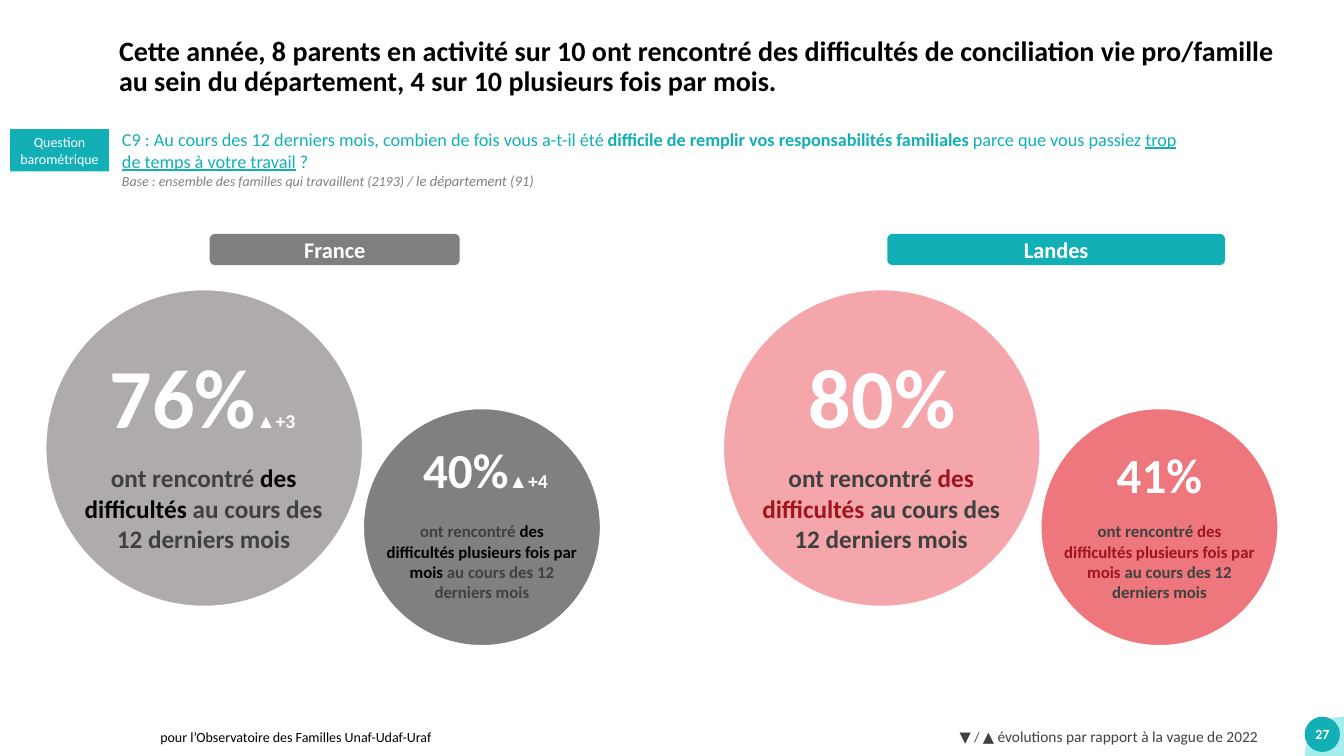
import math

from lxml import etree
from pptx import Presentation
from pptx.dml.color import RGBColor
from pptx.enum.shapes import MSO_SHAPE
from pptx.enum.text import MSO_ANCHOR, PP_ALIGN
from pptx.oxml.ns import qn
from pptx.util import Inches, Pt

OVAL, RECT, ROUNDED = MSO_SHAPE.OVAL, MSO_SHAPE.RECTANGLE, MSO_SHAPE.ROUNDED_RECTANGLE
TOP, MIDDLE = MSO_ANCHOR.TOP, MSO_ANCHOR.MIDDLE
LEFT, CENTER = PP_ALIGN.LEFT, PP_ALIGN.CENTER
COLORS = {
    "teal": "13AFB7", "aqua": "A6EDED", "white": "FFFFFF", "black": "000000",
    "dark": "404040", "grey": "808080", "badge": "7F7F7F", "silver": "AFABAB",
    "rose": "F4A6AA", "coral": "ED777C", "crimson": "9F151C",
}
WIDTH, HEIGHT = 13.33, 7.5
PANEL_LEFT, PANEL_STEP = 0.45, 6.72
BIG, SMALL = 3.15, 2.36
BIG_TOP, SMALL_TOP = 2.87, 4.05

deck = Presentation()
deck.slide_width, deck.slide_height = Inches(WIDTH), Inches(HEIGHT)
slide = deck.slides.add_slide(deck.slide_layouts[6])
shapes = slide.shapes


def write(frame, paragraph, runs, size, color, align=LEFT, anchor=TOP, bold=False, sides=(0.1, 0.1)):
    frame.word_wrap = True
    frame.vertical_anchor = anchor
    frame.margin_left, frame.margin_right = map(Inches, sides)
    paragraph.alignment = align
    font = paragraph.font
    font.name, font.size, font.bold = "Calibri", Pt(size), bold
    font.color.rgb = RGBColor.from_string(COLORS[color])
    for text, changes in runs:
        run = paragraph.add_run()
        run.text = text
        for attribute, value in changes.items():
            if attribute == "color":
                run.font.color.rgb = RGBColor.from_string(COLORS[value])
            else:
                setattr(run.font, attribute, value)


def draw(kind, left, top, width, height, fill, outlined=False):
    shape = shapes.add_shape(kind, *map(Inches, (left, top, width, height)))
    shape.shadow.inherit = False
    shape.fill.solid()
    shape.fill.fore_color.rgb = RGBColor.from_string(COLORS[fill])
    if outlined:
        shape.line.color.rgb = RGBColor.from_string(COLORS["white"])
        shape.line.width = Pt(1.5)
    else:
        shape.line.fill.background()
    return shape


corner_radius = 0.39
arc = [
    (WIDTH - corner_radius * math.cos(math.radians(angle)),
     HEIGHT - corner_radius * math.sin(math.radians(angle)))
    for angle in range(0, 91, 5)
]
builder = shapes.build_freeform(Inches(WIDTH), Inches(HEIGHT))
builder.add_line_segments([(Inches(x), Inches(y)) for x, y in arc])
corner = builder.convert_to_shape()
corner.shadow.inherit = False
corner.fill.solid()
corner.fill.fore_color.rgb = RGBColor.from_string(COLORS["aqua"])
corner.line.fill.background()

page_number = draw(OVAL, 12.94, 7.11, 0.35, 0.35, "teal").text_frame
write(page_number, page_number.paragraphs[0], [("27", {})], 10, "white",
      CENTER, MIDDLE, True, (0, 0))
page_number.word_wrap = False

labels = [
    ((1.59, 7.18, 5.3, 0.26), 10, "black", MIDDLE, False, (0, 0),
     [("pour l’Observatoire des Familles Unaf-Udaf-Uraf", {})]),
    ((1.14, 0.25, 11.81, 0.84), 20, "black", MIDDLE, True, (0.04, 0.1),
     [("Cette année, 8 parents en activité sur 10 ont rencontré des difficultés de "
       "conciliation vie pro/famille au sein du département, 4 sur 10 plusieurs fois "
       "par mois.", {})]),
    ((9.42, 7.16, 3.6, 0.29), 10.5, "dark", TOP, False, (0.1, 0.1),
     [("▼ ", {}), ("/", {"size": Pt(10)}), (" ▲ ", {}),
      ("évolutions par rapport à la vague de 2022", {"size": Pt(11)})]),
    ((1.17, 1.22, 10.77, 0.51), 13, "teal", TOP, False, (0.04, 0.1),
     [("C9 : Au cours des 12 derniers mois, combien de fois vous a-t-il été ", {}),
      ("difficile de remplir vos responsabilités familiales ", {"bold": True}),
      ("parce que vous passiez ", {}),
      ("trop de temps à votre travail", {"underline": True}), (" ?", {})]),
]
for place, size, color, anchor, bold, sides, runs in labels:
    frame = shapes.add_textbox(*map(Inches, place)).text_frame
    write(frame, frame.paragraphs[0], runs, size, color, LEFT, anchor, bold, sides)
    if size == 20:
        frame.paragraphs[0].line_spacing = 0.9

base = frame.add_paragraph()
write(frame, base,
      [("Base : ensemble des familles qui travaillent (2193) ", {}),
       ("/ le département (91)", {"size": Pt(10.5)})],
      10, "grey", sides=(0.04, 0.1))
base.font.italic = True

question_tag = draw(RECT, 0.1, 1.28, 0.98, 0.42, "teal").text_frame
write(question_tag, question_tag.paragraphs[0], [("Question barométrique", {})],
      10, "white", CENTER, MIDDLE, sides=(0.04, 0.04))

panels = [
    ("France", 2.48, "badge", "silver", "grey", "black",
     ("76%", "+3", 0.31, 2.5), ("40%", "+4", 3.31, 2.11), 4.33),
    ("Landes", 3.35, "teal", "rose", "coral", "crimson",
     ("80%", "", 0.21, 2.74), ("41%", "", 3.22, 2.22), 4.38),
]
for column, panel in enumerate(panels):
    area, header_width, header_fill, big_fill, small_fill, accent, often, monthly, monthly_top = panel
    left = PANEL_LEFT + column * PANEL_STEP
    header = draw(ROUNDED, left + 1.63, 2.32, header_width, 0.31, header_fill).text_frame
    write(header, header.paragraphs[0], [(area, {})], 16, "white", CENTER, MIDDLE, True)

    draw(OVAL, left + BIG, SMALL_TOP, SMALL, SMALL, small_fill, True)
    draw(OVAL, left, BIG_TOP, BIG, BIG, big_fill, True)

    bubbles = [
        (often, 3.41, 1.1, 60, (0.27, 4.54, 2.6, 1.31), 18, "des difficultés "),
        (monthly, monthly_top, 0.68, 35, (3.27, 5.12, 2.12, 0.91), 12,
         "des difficultés plusieurs fois par mois "),
    ]
    for figure, top, height, figure_size, caption_place, caption_size, emphasis in bubbles:
        share, change, offset, width = figure
        table = shapes.add_table(
            1, 1, *map(Inches, (left + offset, top, width, height))).table
        table.first_row = table.horz_banding = False
        cell = table.cell(0, 0)
        cell_properties = cell._tc.get_or_add_tcPr()
        for side in ("a:lnL", "a:lnR", "a:lnT", "a:lnB"):
            border = etree.SubElement(cell_properties, qn(side))
            etree.SubElement(border, qn("a:noFill"))
        cell.fill.background()
        figure_runs = [(share, {})]
        if change:
            figure_runs += [("▲", {"size": Pt(14), "name": "Arial"}),
                            (change, {"size": Pt(14)})]
        write(cell.text_frame, cell.text_frame.paragraphs[0], figure_runs,
              figure_size, "white", CENTER, bold=True)

        caption_offset, *caption_rest = caption_place
        caption = shapes.add_textbox(
            *map(Inches, (left + caption_offset, *caption_rest))).text_frame
        write(caption, caption.paragraphs[0],
              [("ont rencontré ", {}), (emphasis, {"color": accent}),
               ("au cours des 12 derniers mois", {})],
              caption_size, "dark", CENTER, bold=True)

deck.save("out.pptx")
